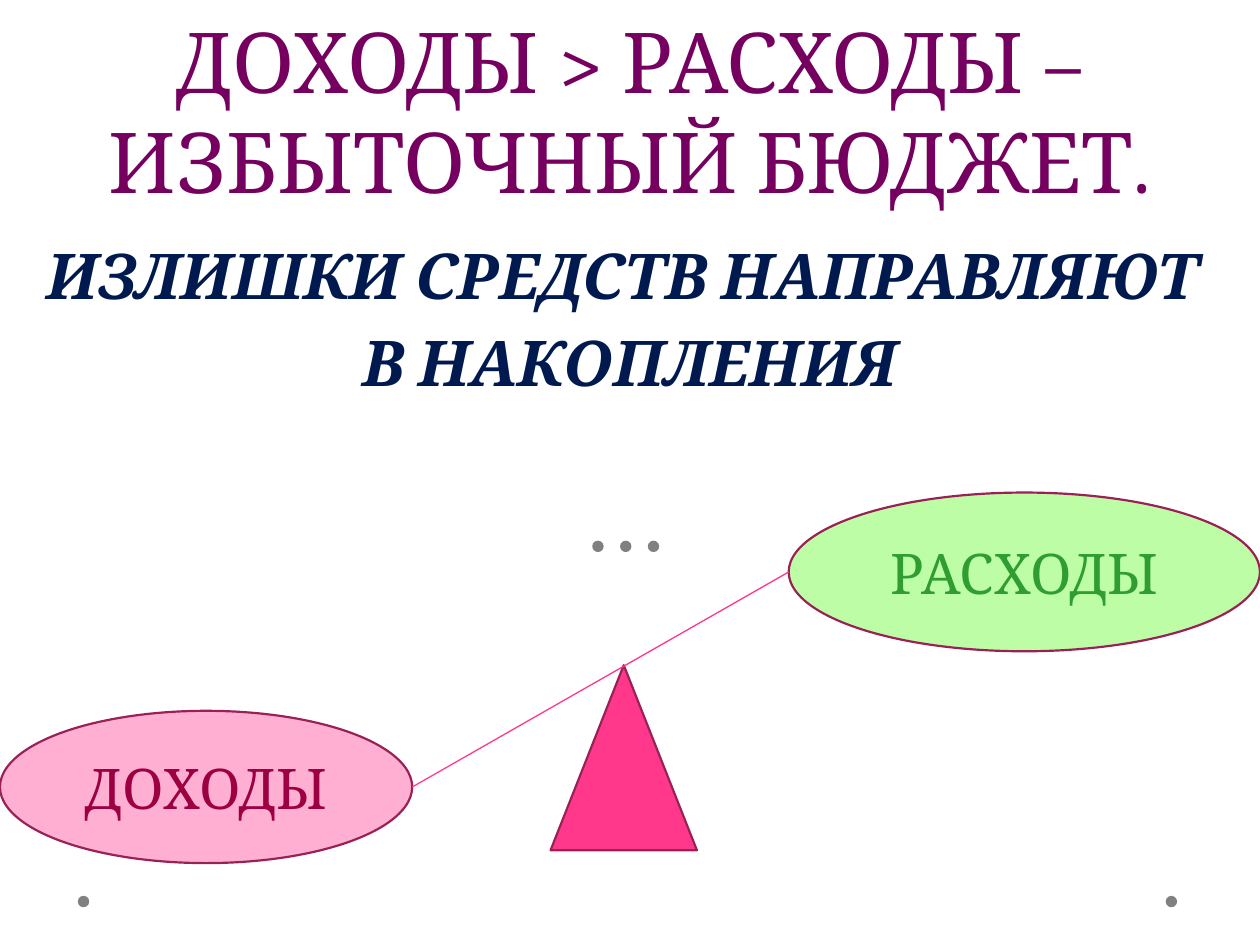
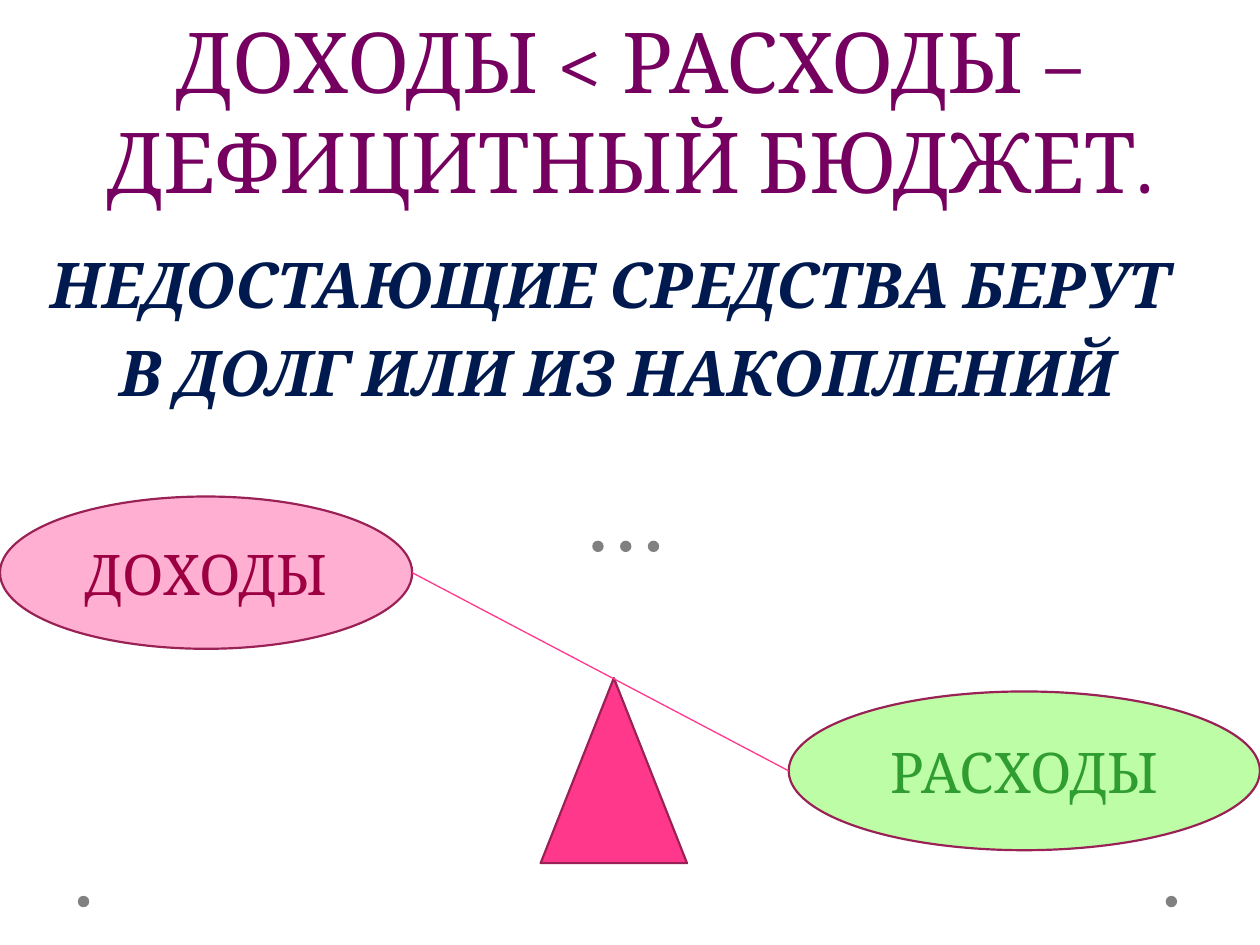
import pptx
import pptx.util
import pptx.dml.color
import pptx.enum.shapes
import pptx.enum.text
import pptx.oxml.ns
import lxml.etree

Cm = pptx.util.Cm
Pt = pptx.util.Pt
SHAPES = pptx.enum.shapes.MSO_SHAPE
COLOURS = {
    "title": "75005F", "body": "001A4F", "dot": "808080",
    "outline": "9A2155", "accent": "FF388C",
    "income": "FFAFD1", "income_text": "9C0042",
    "expense": "BCFDA5", "expense_text": "2F9D2F",
}
FONTS = {
    "title": {"name": "Cambria", "size": Pt(48)},
    "body": {"name": "Cambria", "size": Pt(36), "bold": True, "italic": True},
    "label": {"name": "Cambria", "size": Pt(32)},
}
DOTS = [(1.57, 18.06), (23.5, 18.06), (11.94, 10.9), (12.5, 10.9), (13.06, 10.9)]
INCOME_SIZE = (8.31, 3.07)
EXPENSE_SIZE = (9.5, 3.2)
EXPENSE_LEFT = 15.9
PIVOT_SIZE = (2.95, 3.73)

BUDGETS = [
    {
        "title": "ДОХОДЫ > РАСХОДЫ –\vИЗБЫТОЧНЫЙ БЮДЖЕТ.",
        "body": ["ИЗЛИШКИ СРЕДСТВ НАПРАВЛЯЮТ ", "В НАКОПЛЕНИЯ"],
        "body_box": (0.5, 4.52, 24.4, 4.8),
        "income_top": 14.33, "expense_top": 9.93, "pivot": (11.1, 13.41),
    },
    {
        "title": "ДОХОДЫ < РАСХОДЫ –\vДЕФИЦИТНЫЙ БЮДЖЕТ.",
        "body": ["НЕДОСТАЮЩИЕ СРЕДСТВА БЕРУТ ", "В ДОЛГ ИЛИ ИЗ НАКОПЛЕНИЙ"],
        "body_box": (0, 4.72, 24.9, 5.28),
        "income_top": 10.01, "expense_top": 13.94, "pivot": (10.9, 13.67),
    },
]


def write(frame, lines, style, colour, spacing=None):
    for number, line in enumerate(lines):
        para = frame.paragraphs[0] if number == 0 else frame.add_paragraph()
        para.text = line
        para.alignment = pptx.enum.text.PP_ALIGN.CENTER
        para.line_spacing = spacing
        for span in para.runs:
            for name, value in FONTS[style].items():
                setattr(span.font, name, value)
            span.font.color.rgb = pptx.dml.color.RGBColor.from_string(COLOURS[colour])


def draw(page, kind, place, fill, outlined=True):
    shape = page.shapes.add_shape(kind, *[Cm(length) for length in place])
    shape.shadow.inherit = False
    shape.fill.solid()
    shape.fill.fore_color.rgb = pptx.dml.color.RGBColor.from_string(COLOURS[fill])
    if outlined:
        shape.line.color.rgb = pptx.dml.color.RGBColor.from_string(COLOURS["outline"])
        shape.line.width = Pt(1.25)
    else:
        shape.line.fill.background()
    return shape


deck = pptx.Presentation()
deck.slide_width = Cm(25.4)
deck.slide_height = Cm(19.05)

for budget in BUDGETS:
    page = deck.slides.add_slide(deck.slide_layouts[6])

    for left, top in DOTS:
        draw(page, SHAPES.OVAL, (left, top, 0.23, 0.23), "dot", outlined=False)

    texts = [
        ("title", [budget["title"]], (0, 0.22, 25.4, 4.1), Pt(57)),
        ("body", budget["body"], budget["body_box"], Pt(50)),
    ]
    for style, lines, place, spacing in texts:
        box = page.shapes.add_textbox(*[Cm(length) for length in place])
        frame = box.text_frame
        frame.word_wrap = True
        for side in ("left", "top", "right", "bottom"):
            setattr(frame, "margin_" + side, 0)
        write(frame, lines, style, style, spacing)

    pans = [
        ("ДОХОДЫ", "income", (0, budget["income_top"], *INCOME_SIZE)),
        ("РАСХОДЫ", "expense", (EXPENSE_LEFT, budget["expense_top"], *EXPENSE_SIZE)),
    ]
    for label, fill, place in pans:
        pan = draw(page, SHAPES.OVAL, place, fill)
        write(pan.text_frame, [label], "label", fill + "_text")

    draw(page, SHAPES.ISOSCELES_TRIANGLE, (*budget["pivot"], *PIVOT_SIZE), "accent")

    beam = page.shapes.add_connector(
        pptx.enum.shapes.MSO_CONNECTOR.STRAIGHT,
        Cm(INCOME_SIZE[0]), Cm(budget["income_top"] + INCOME_SIZE[1] / 2),
        Cm(EXPENSE_LEFT), Cm(budget["expense_top"] + EXPENSE_SIZE[1] / 2),
    )
    beam.line.color.rgb = pptx.dml.color.RGBColor.from_string(COLOURS["accent"])
    beam.line.width = Pt(0.75)
    lxml.etree.SubElement(beam.element.spPr, pptx.oxml.ns.qn("a:effectLst"))

deck.save("out.pptx")
